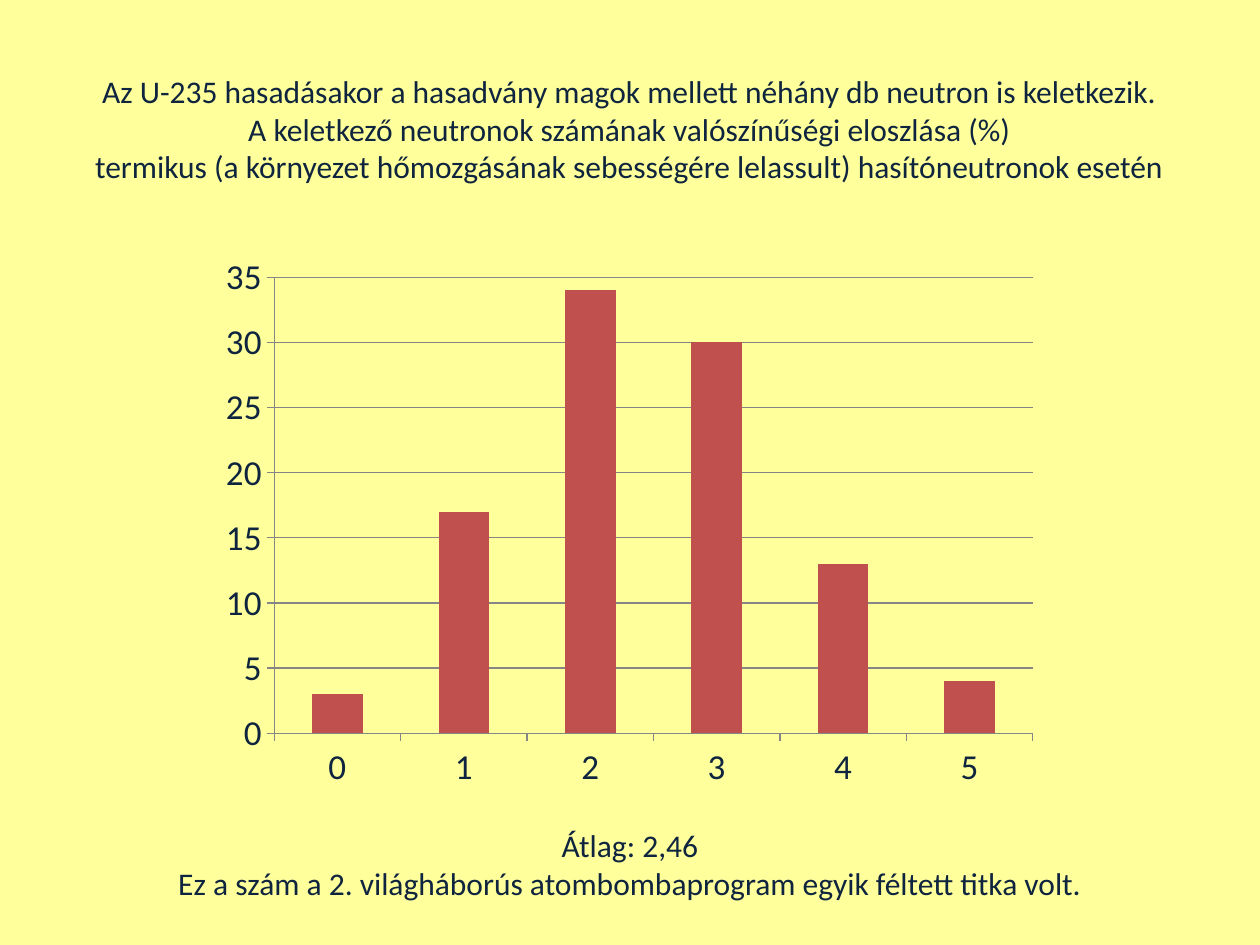
from pptx import Presentation
from pptx.chart.data import CategoryChartData
from pptx.dml.color import RGBColor
from pptx.enum.chart import XL_CHART_TYPE, XL_TICK_MARK
from pptx.enum.text import MSO_ANCHOR, MSO_AUTO_SIZE, PP_ALIGN
from pptx.util import Inches, Pt

COLUMN = XL_CHART_TYPE.COLUMN_CLUSTERED
OUTSIDE, NO_TICK = XL_TICK_MARK.OUTSIDE, XL_TICK_MARK.NONE
TOP, CENTER, NO_FIT = MSO_ANCHOR.TOP, PP_ALIGN.CENTER, MSO_AUTO_SIZE.NONE

FONT = "Calibri"
NAVY, RED, GRAY, YELLOW = "0F243E", "C0504D", "868686", "FFFF9B"

HEADING = [
    "Az U-235 hasadásakor a hasadvány magok mellett néhány db neutron is keletkezik.\v"
    "A keletkező neutronok számának valószínűségi eloszlása (%)",
    "termikus (a környezet hőmozgásának sebességére lelassult) hasítóneutronok esetén",
]
CAPTION = [
    "Átlag: 2,46",
    "Ez a szám a 2. világháborús atombombaprogram egyik féltett titka volt.",
]
NEUTRON_SHARES = {"0": 3, "1": 17, "2": 34, "3": 30, "4": 13, "5": 4}


def rgb(value):
    return RGBColor.from_string(value)


def inches(*box):
    return [Inches(v) for v in box]


def style_font(font, size):
    font.name, font.size, font.bold = FONT, Pt(size), False
    font.color.rgb = rgb(NAVY)


def fill_text(sp, box, lines):
    """Place a text shape in the box and write centred paragraphs."""
    sp.left, sp.top, sp.width, sp.height = inches(*box)
    tf = sp.text_frame
    tf.word_wrap, tf.auto_size, tf.vertical_anchor = True, NO_FIT, TOP
    tf.text = "\n".join(lines)
    for p in tf.paragraphs:
        p.alignment = CENTER
        p.space_before = Pt(0)
        style_font(p.font, 18)


def add_distribution_chart(slide, box):
    data = CategoryChartData()
    data.categories = list(NEUTRON_SHARES)
    data.add_series("Series 1", list(NEUTRON_SHARES.values()))
    chart = slide.shapes.add_chart(COLUMN, *inches(*box), data).chart
    chart.has_legend = chart.has_title = False
    style_font(chart.font, 20)

    plot = chart.plots[0]
    plot.gap_width, plot.vary_by_categories = 150, False
    fill = plot.series[0].format.fill
    fill.solid()
    fill.fore_color.rgb = rgb(RED)

    for axis in (chart.category_axis, chart.value_axis):
        axis.major_tick_mark, axis.minor_tick_mark = OUTSIDE, NO_TICK
        axis.format.line.color.rgb = rgb(GRAY)
        style_font(axis.tick_labels.font, 20)
    values = chart.value_axis
    values.minimum_scale, values.maximum_scale, values.major_unit = 0, 35, 5
    values.has_major_gridlines = True
    values.major_gridlines.format.line.color.rgb = rgb(GRAY)


def main():
    prs = Presentation()
    prs.slide_width, prs.slide_height = inches(10, 7.5)
    slide = prs.slides.add_slide(prs.slide_layouts[5])
    slide.background.fill.solid()
    slide.background.fill.fore_color.rgb = rgb(YELLOW)

    add_distribution_chart(slide, (1.66, 1.94, 6.67, 4.41))
    fill_text(slide.shapes.title, (0.39, 0.52, 9.21, 1.01), HEADING)
    caption_box = (0.75, 6.51, 8.5, 0.71)
    fill_text(slide.shapes.add_textbox(*inches(*caption_box)), caption_box, CAPTION)
    prs.save("out.pptx")


if __name__ == "__main__":
    main()
